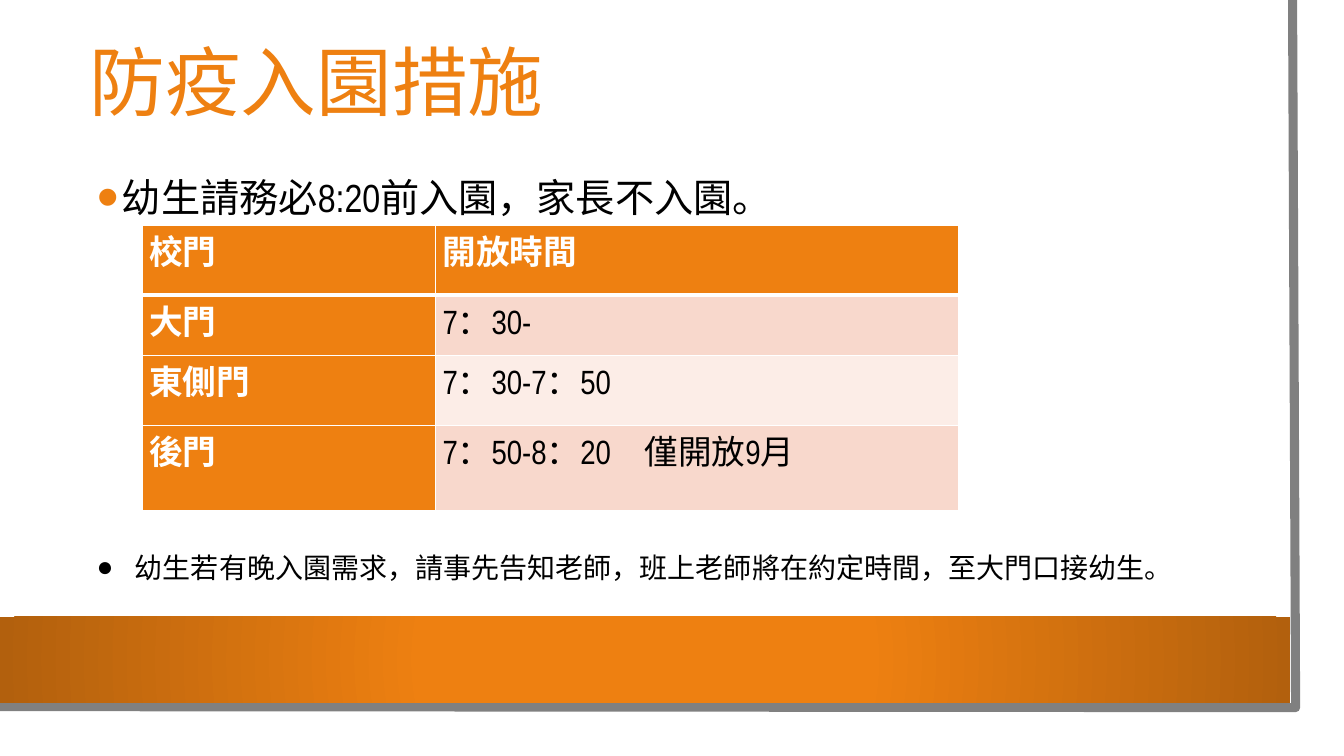
from lxml import etree
from pptx import Presentation
from pptx.dml.color import RGBColor
from pptx.enum.text import MSO_ANCHOR, MSO_AUTO_SIZE, PP_ALIGN
from pptx.enum.shapes import MSO_SHAPE
from pptx.oxml.ns import qn
from pptx.util import Inches, Pt

RECT = MSO_SHAPE.RECTANGLE
TOP, MID = MSO_ANCHOR.TOP, MSO_ANCHOR.MIDDLE
LEFT = PP_ALIGN.LEFT
FIXED = MSO_AUTO_SIZE.NONE
COLORS = {
    "orange": "EE8011", "rust": "B2600D", "gray": "808080",
    "white": "FFFFFF", "black": "000000", "pink": "F8D8CC", "pale": "FCEDE7",
}
NARROW, SANS, PLAIN = "Arial Narrow", "Noto Sans CJK SC", "Calibri"
GATES = [
    ("校門", "開放時間"),
    ("大門", "7：30-"),
    ("東側門", "7：30-7：50"),
    ("後門", "7：50-8：20　僅開放9月"),
]
WIDTHS = [2.91, 5.19]
HEIGHTS = [0.69, 0.6, 0.69, 0.85]


def rgb(name):
    return RGBColor.from_string(COLORS[name])


def apply(item, values):
    for key, value in values.items():
        setattr(item, key, value)


def place(shape, *box):
    keys = ("left", "top", "width", "height")
    apply(shape, dict(zip(keys, map(Inches, box))))


def node(parent, tag, **attrs):
    return etree.SubElement(parent, qn(tag), attrs)


def tint(parent, name):
    node(parent, "a:srgbClr", val=COLORS[name])


def write(frame, text, size, font, color, bold=False, para=None):
    line = frame.paragraphs[0]
    line.text = text
    apply(line, {"alignment": LEFT, "space_before": Pt(0), **(para or {})})
    apply(line.font, {"size": Pt(size), "name": font, "bold": bold})
    line.font.color.rgb = rgb(color)


def bullet(frame, mark, indent, color=None, scale=None):
    props = frame.paragraphs[0]._p.get_or_add_pPr()
    props.set("marL", str(Inches(indent)))
    props.set("indent", str(-Inches(indent)))
    if color:
        tint(node(props, "a:buClr"), color)
    if scale:
        node(props, "a:buSzPct", val=str(scale * 1000))
    node(props, "a:buFont", typeface="Arial")
    node(props, "a:buChar", char=mark)


def block(shapes, color, *box):
    shape = shapes.add_shape(RECT, *map(Inches, box))
    shape.shadow.inherit = False
    shape.fill.solid()
    shape.fill.fore_color.rgb = rgb(color)
    shape.line.fill.background()
    return shape


def glow(shape, inner, outer):
    props = shape._element.spPr
    old = props.find(qn("a:solidFill"))
    grad = etree.Element(qn("a:gradFill"), rotWithShape="1")
    stops = node(grad, "a:gsLst")
    for pos, name in ((34, inner), (100, outer)):
        tint(node(stops, "a:gs", pos=str(pos * 1000)), name)
    route = node(grad, "a:path")
    route.set("path", "circle")
    node(route, "a:fillToRect", **dict.fromkeys("ltrb", "50000"))
    props.replace(old, grad)


def edge(shapes):
    outline = shapes.build_freeform(Inches(12.82), 0)
    points = [(12.85, 7.02), (-0.03, 7.01)]
    outline.add_line_segments([(Inches(x), Inches(y)) for x, y in points], close=False)
    shape = outline.convert_to_shape()
    shape.shadow.inherit = False
    shape.fill.background()
    shape.line.color.rgb = rgb("gray")
    shape.line.width = Pt(6.5)
    return shape


def border(cell, heavy):
    props = cell._tc.get_or_add_tcPr()
    for spot, side in enumerate("LRTB"):
        width = Pt(3 if side == heavy else 1)
        line = etree.Element(qn(f"a:ln{side}"), w=str(width))
        tint(node(line, "a:solidFill"), "white")
        props.insert(spot, line)


def grid(shapes):
    box = map(Inches, (1.41, 2.24, sum(WIDTHS), sum(HEIGHTS)))
    table = shapes.add_table(len(GATES), len(WIDTHS), *box).table
    for col, width in zip(table.columns, WIDTHS):
        col.width = Inches(width)
    for r, (row, height) in enumerate(zip(GATES, HEIGHTS)):
        table.rows[r].height = Inches(height)
        for c, text in enumerate(row):
            cell = table.cell(r, c)
            head = r == 0 or c == 0
            fill = "orange" if head else ("pale", "pink")[r % 2]
            cell.fill.solid()
            cell.fill.fore_color.rgb = rgb(fill)
            apply(cell, {"margin_left": Inches(0.07), "margin_right": Inches(0.07),
                         "margin_top": 0, "margin_bottom": 0})
            font = SANS if r and c == 0 else NARROW
            write(cell.text_frame, text, 24, font, "white" if head else "black", head)
            border(cell, {0: "B", 1: "T"}.get(r))


def main():
    deck = Presentation()
    apply(deck, {"slide_width": Inches(13.33), "slide_height": Inches(7.5)})
    slide = deck.slides.add_slide(deck.slide_layouts[1])
    shapes = slide.shapes

    page = block(shapes, "white", 0, 0, 13.1, 7.27)
    frame = edge(shapes)
    band = block(shapes, "orange", 0, 6.12, 12.8, 0.85)
    glow(band, "orange", "rust")
    for spot, shape in enumerate((page, frame, band), 2):
        shapes._spTree.insert(spot, shape._element)

    title = shapes.title
    place(title, 0.79, 0.22, 11.37, 1.26)
    apply(title.text_frame, {"vertical_anchor": MID, "auto_size": FIXED})
    write(title.text_frame, "防疫入園措施", 54, NARROW, "orange",
          para={"line_spacing": 0.9})

    body = slide.placeholders[1]
    place(body, 0.86, 1.58, 11.37, 0.66)
    apply(body.text_frame, {"vertical_anchor": TOP, "auto_size": FIXED})
    bullet(body.text_frame, "•", 0.25, "orange", 160)
    write(body.text_frame, "幼生請務必8:20前入園，家長不入園。", 28, NARROW, "black",
          para={"line_spacing": 1.2})

    grid(shapes)

    note = shapes.add_textbox(*map(Inches, (0.86, 5.41, 10.66, 0.44)))
    note.text_frame.word_wrap = True
    bullet(note.text_frame, "●", 0.38)
    write(note.text_frame,
          "幼生若有晚入園需求，請事先告知老師，班上老師將在約定時間，至大門口接幼生。",
          20, PLAIN, "black")

    deck.save("out.pptx")


if __name__ == "__main__":
    main()
